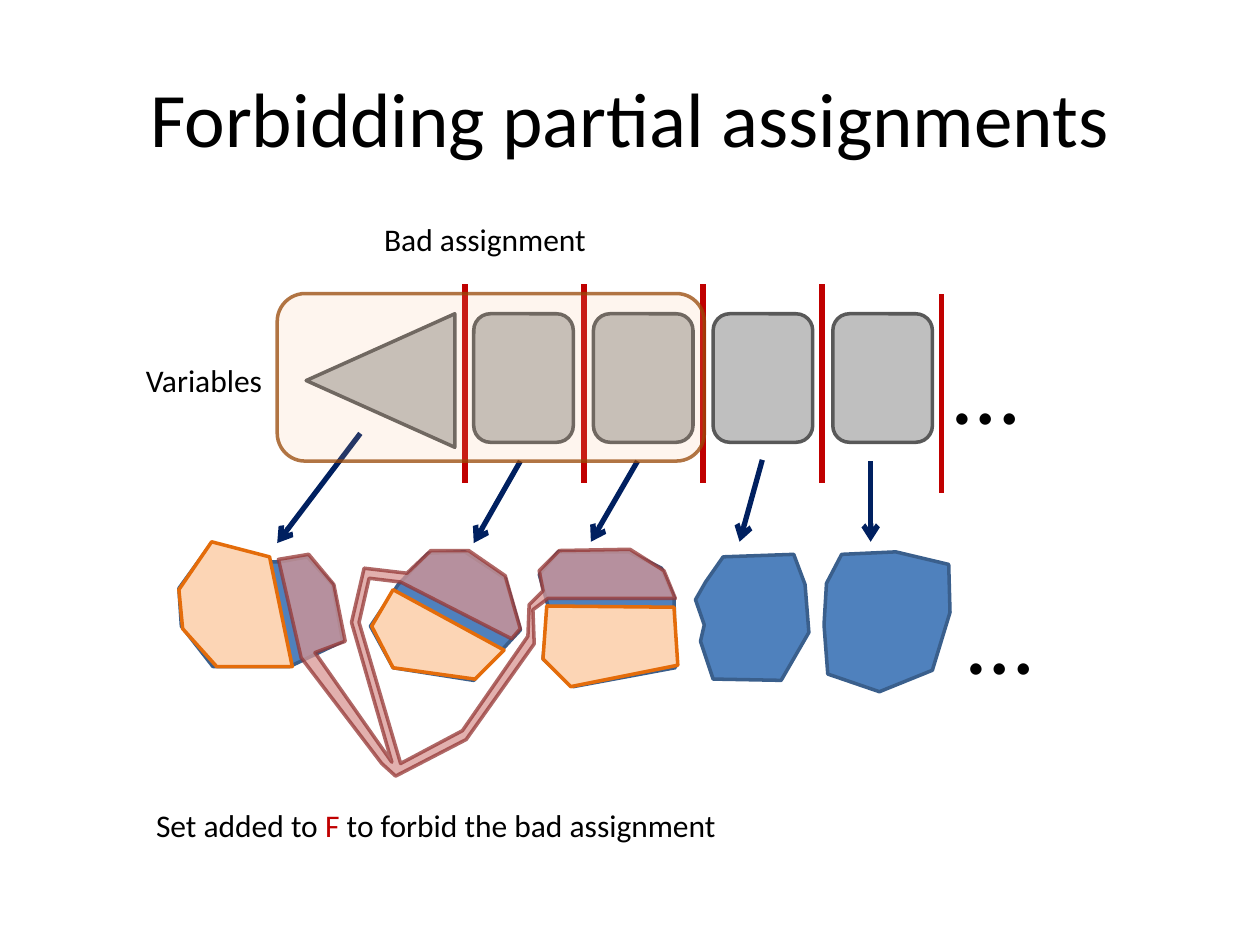
import pptx
import pptx.dml.color
import pptx.enum.shapes
import pptx.enum.text
import pptx.oxml
import pptx.oxml.ns
import pptx.util

SHAPE = pptx.enum.shapes.MSO_SHAPE
TEXT = pptx.enum.text


def cm(inches):
    return pptx.util.Cm(inches * 2.54)


def rgb(code):
    return pptx.dml.color.RGBColor.from_string(code)


def element(xml):
    return pptx.oxml.parse_xml(xml.replace("/>", f' {pptx.oxml.ns.nsdecls("a")}/>'))


def apply(target, values):
    for name, value in values.items():
        setattr(target, name, value)


class Deck:
    """Holds the text style and the current slide."""
    font = {"name": "Calibri", "bold": False}
    box = {"word_wrap": False, "auto_size": TEXT.MSO_AUTO_SIZE.SHAPE_TO_FIT_TEXT}

    def __init__(self, prs):
        self.s = prs.slides.add_slide(prs.slide_layouts[5])

    def add_runs(self, p, runs, size):
        for text, color in runs:
            r = p.add_run()
            r.text = text
            apply(r.font, {**self.font, "size": pptx.util.Pt(size)})
            r.font.color.rgb = rgb(color)

    def title(self, text, left, top, width, height):
        sp = self.s.shapes.title
        apply(sp, {"left": cm(left), "top": cm(top), "width": cm(width), "height": cm(height)})
        tf = sp.text_frame
        tf.vertical_anchor = TEXT.MSO_ANCHOR.MIDDLE
        p = tf.paragraphs[0]
        p.alignment = TEXT.PP_ALIGN.CENTER
        self.add_runs(p, [(text, "000000")], 44)

    def text(self, runs, left, top, width, height=0.4, size=18):
        sp = self.s.shapes.add_textbox(cm(left), cm(top), cm(width), cm(height))
        tf = sp.text_frame
        apply(tf, self.box)
        self.add_runs(tf.paragraphs[0], runs, size)

    def paint(self, sp, fill, line, fill_alpha=100, line_alpha=100):
        sp.shadow.inherit = False
        sp.line.width = pptx.util.Pt(2)
        for fmt, color, alpha in ((sp.fill, fill, fill_alpha), (sp.line.fill, line, line_alpha)):
            fmt.solid()
            fmt.fore_color.rgb = rgb(color)
            if alpha < 100:
                for clr in sp.element.spPr.iter(pptx.oxml.ns.qn("a:srgbClr")):
                    if clr.get("val") == color:
                        clr.append(element(f'<a:alpha val="{alpha * 1000}"/>'))

    def shape(self, kind, left, top, width, height, rotation=0, **colors):
        sp = self.s.shapes.add_shape(kind, cm(left), cm(top), cm(width), cm(height))
        sp.rotation = rotation
        self.paint(sp, **colors)

    def outline(self, points, **colors):
        """Closed polygon, points in hundredths of an inch."""
        builder = self.s.shapes.build_freeform(*points[0], scale=cm(0.01))
        builder.add_line_segments(points[1:], close=True)
        self.paint(builder.convert_to_shape(), **colors)

    def line(self, x1, y1, x2, y2, color, arrow=False):
        sp = self.s.shapes.add_connector(
            pptx.enum.shapes.MSO_CONNECTOR.STRAIGHT, cm(x1), cm(y1), cm(x2), cm(y2))
        sp.line.width = pptx.util.Pt(3)
        sp.line.color.rgb = rgb(color)
        if arrow:
            ln = sp.element.spPr.find(pptx.oxml.ns.qn("a:ln"))
            ln.append(element('<a:tailEnd type="arrow"/>'))
        sp.element.spPr.append(element("<a:effectLst/>"))


GRAY = {"fill": "BFBFBF", "line": "595959"}
BLUE = {"fill": "4F81BD", "line": "3A5F8C"}
ORANGE = {"fill": "FCD5B5", "line": "E46C0A"}
ROSE = {"fill": "D99694", "line": "953735", "fill_alpha": 75, "line_alpha": 75}
HIGHLIGHT = {"fill": "FAC090", "line": "984807", "fill_alpha": 15, "line_alpha": 75}

DOMAINS = [
    [(216, 446), (168, 431), (142, 467), (144, 497), (169, 529), (230, 529), (272, 509),
     (264, 464), (244, 442), (222, 446)],
    [(316, 464), (340, 439), (369, 438), (401, 459), (413, 500), (376, 540), (312, 530),
     (294, 497)],
    [(435, 481), (428, 456), (443, 438), (499, 438), (525, 451), (535, 474), (536, 530),
     (455, 545), (431, 523)],
    [(574, 442), (560, 462), (552, 476), (559, 496), (556, 509), (566, 539), (620, 540),
     (642, 502), (639, 464), (630, 440)],
    [(668, 440), (656, 463), (654, 496), (657, 535), (698, 549), (740, 532), (754, 486),
     (753, 448), (711, 438)],
]
ALLOWED_PARTS = [
    [(214, 442), (168, 430), (142, 468), (145, 499), (172, 529), (232, 529)],
    [(312, 468), (400, 516), (377, 539), (312, 530), (295, 497)],
    [(434, 481), (431, 523), (453, 545), (538, 528), (535, 482)],
]
FORBIDDEN_SET = [
    (239, 522), (221, 444), (245, 440), (265, 464), (274, 509), (250, 518), (311, 605),
    (279, 494), (289, 451), (323, 455), (342, 437), (372, 437), (401, 457), (413, 499),
    (406, 507), (318, 462), (293, 459), (285, 494), (318, 606), (367, 580), (419, 505),
    (420, 480), (431, 469), (428, 453), (444, 437), (500, 436), (527, 453), (536, 475),
    (435, 475), (423, 484), (424, 511), (370, 587), (314, 616), (303, 606),
]
ARROWS = [(2.86, 3.44, 2.2, 4.31), (4.13, 3.66, 3.76, 4.31), (5.06, 3.66, 4.69, 4.3),
          (6.05, 3.65, 5.87, 4.3), (6.91, 3.66, 6.91, 4.3)]


def main():
    prs = pptx.Presentation()
    apply(prs, {"slide_width": cm(10), "slide_height": cm(7.5)})
    deck = Deck(prs)
    deck.title("Forbidding partial assignments", 0.5, 0.3, 9, 1.25)

    # Row of variables
    deck.shape(SHAPE.ISOSCELES_TRIANGLE, 2.49, 2.43, 1.06, 1.18, rotation=270, **GRAY)
    for i in range(4):
        deck.shape(SHAPE.ROUNDED_RECTANGLE, 3.76 + 0.95 * i, 2.49, 0.79, 1.02, **GRAY)
    deck.text([("Variables", "000000")], 1.06, 2.82, 1.13)
    deck.text([("…", "000000")], 7.47, 2.57, 0.72, 1.01, size=54)

    # Separators, the last one slightly lower
    for i in range(5):
        drop = 0.08 if i == 4 else 0
        x = 3.69 + 3.78 * i / 4
        deck.line(x, 3.83 + drop, x, 2.25 + drop, "C00000")

    # Domains of the variables
    for points in DOMAINS:
        deck.outline(points, **BLUE)
    deck.text([("…", "000000")], 7.58, 4.55, 0.72, 1.01, size=54)
    for ends in ARROWS:
        deck.line(*ends, "002060", arrow=True)

    # Bad assignment
    deck.shape(SHAPE.ROUNDED_RECTANGLE, 2.2, 2.33, 3.39, 1.33, **HIGHLIGHT)
    deck.text([("Bad assignment", "000000")], 2.95, 1.7, 1.82)

    # Allowed parts and the forbidden set
    for points in ALLOWED_PARTS:
        deck.outline(points, **ORANGE)
    deck.outline(FORBIDDEN_SET, **ROSE)
    deck.text([("Set added to ", "000000"), ("F", "C00000"),
               (" to forbid the bad assignment", "000000")], 1.14, 6.35, 4.7)

    prs.save("out.pptx")


if __name__ == "__main__":
    main()
